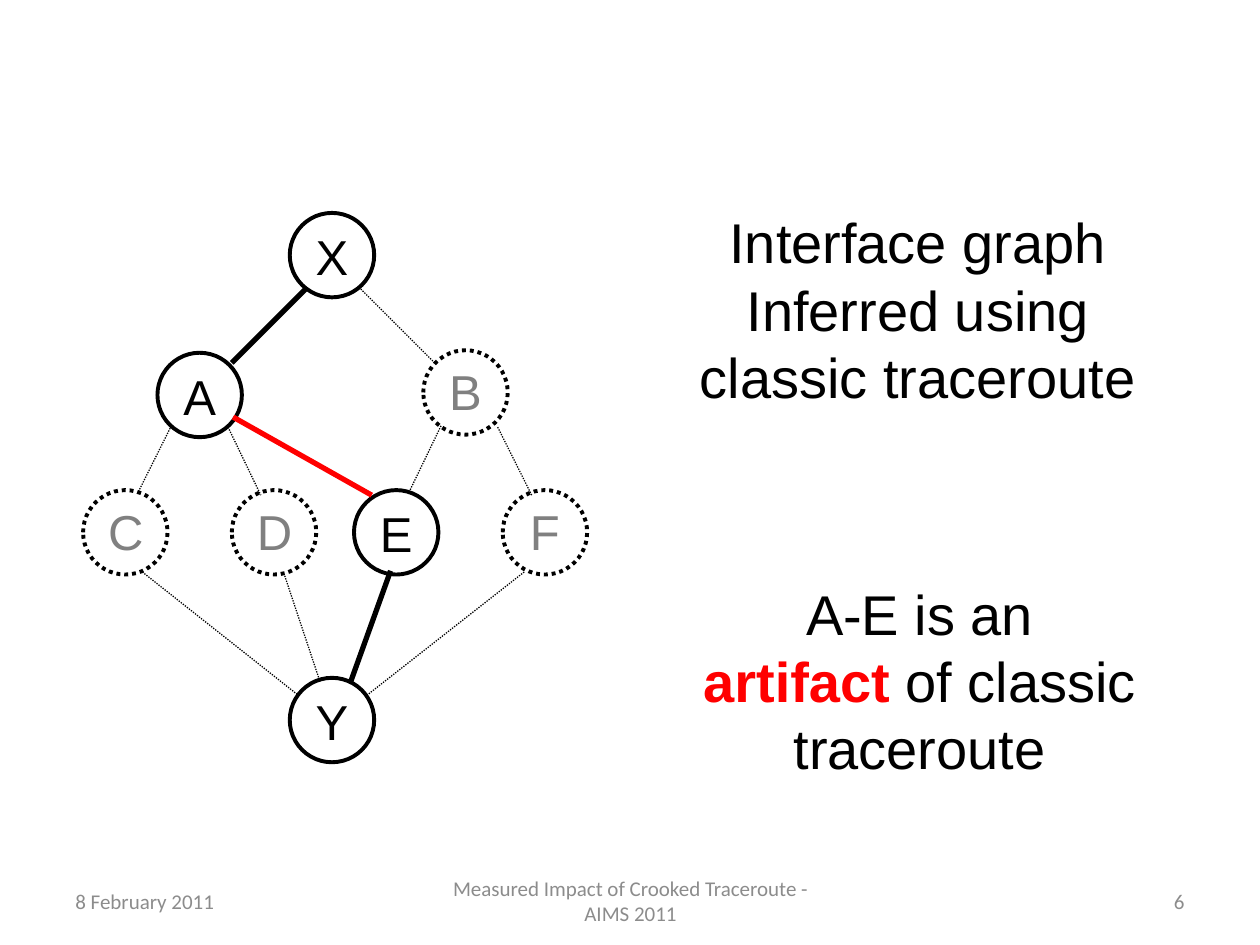
from dataclasses import dataclass

from pptx import Presentation
from pptx import util as u
from pptx.dml.color import RGBColor
from pptx.enum import dml, shapes, text
from pptx.oxml import xmlchemy


@dataclass(frozen=True)
class Theme:
    ink: RGBColor = RGBColor(0, 0, 0)
    accent: RGBColor = RGBColor(255, 0, 0)
    faded: RGBColor = RGBColor(128, 128, 128)
    footer: RGBColor = RGBColor(140, 140, 140)
    body_font: str = "Arial"
    footer_font: str = "Calibri"
    caption_size: int = 32
    node_size: int = 28
    footer_size: int = 12
    outline: float = 2.25
    strong_link: float = 3
    weak_link: float = 0.75


THEME = Theme()
DIAMETER = 0.67
LEFT, CENTER, RIGHT = text.PP_ALIGN.LEFT, text.PP_ALIGN.CENTER, text.PP_ALIGN.RIGHT

SEEN_NODES = {"X": (2.3, 1.69), "Y": (2.3, 5.38), "A": (1.25, 2.8), "E": (2.81, 3.89)}
MISSED_NODES = {"B": (3.36, 2.78), "C": (0.66, 3.89), "D": (1.84, 3.89), "F": (3.99, 3.89)}
SEEN_LINKS = [(2.43, 2.29, 1.84, 2.88), (3.1, 4.53, 2.78, 5.42)]
MISSED_LINKS = [
    (3.45, 2.88, 2.86, 2.29),
    (1.36, 3.38, 1.09, 3.92),
    (1.81, 3.39, 2.07, 3.93),
    (3.5, 3.38, 3.24, 3.92),
    (3.95, 3.39, 4.22, 3.93),
    (1.13, 4.54, 2.37, 5.52),
    (2.26, 4.57, 2.54, 5.41),
    (4.16, 4.54, 2.91, 5.52),
]
FALSE_LINK = (2.95, 3.93, 1.85, 3.31)


def style_line(line, color, width, dotted):
    line.color.rgb = color
    line.width = u.Pt(width)
    if dotted:
        line.dash_style = dml.MSO_LINE.ROUND_DOT


def style_font(font, name, size, color):
    font.name = name
    font.size = u.Pt(size)
    font.color.rgb = color


def add_box(slide, left, top, width, height, wrap=False):
    box = slide.shapes.add_textbox(*map(u.Inches, (left, top, width, height)))
    frame = box.text_frame
    frame.word_wrap = wrap
    if not wrap:
        frame.auto_size = text.MSO_AUTO_SIZE.SHAPE_TO_FIT_TEXT
    return frame


def add_node(slide, name, left, top, seen):
    circle = slide.shapes.add_shape(
        shapes.MSO_SHAPE.OVAL, *map(u.Inches, (left, top, DIAMETER, DIAMETER)))
    circle.shadow.inherit = False
    circle.fill.background()
    style_line(circle.line, THEME.ink, THEME.outline, not seen)

    label_top = top + (0.06 if seen else 0.04)
    frame = add_box(slide, left + 0.1, label_top, DIAMETER - 0.2, 0.57)
    para = frame.paragraphs[0]
    para.text = name
    para.alignment = CENTER
    style_font(para.font, THEME.body_font, THEME.node_size,
               THEME.ink if seen else THEME.faded)


def add_link(slide, ends, color, width, dotted=False):
    link = slide.shapes.add_connector(
        shapes.MSO_CONNECTOR.STRAIGHT, *map(u.Inches, ends))
    style_line(link.line, color, width, dotted)
    link._element.spPr.append(xmlchemy.OxmlElement("a:effectLst"))


def add_caption(slide, place, paragraphs):
    frame = add_box(slide, *place)
    for index, lines in enumerate(paragraphs):
        para = frame.add_paragraph() if index else frame.paragraphs[0]
        para.alignment = CENTER
        style_font(para.font, THEME.body_font, THEME.caption_size, THEME.ink)
        for number, spans in enumerate(lines):
            if number:
                para.add_line_break()
            for words, stressed in spans:
                span = para.add_run()
                span.text = words
                if stressed:
                    span.font.bold = True
                    span.font.color.rgb = THEME.accent


def add_footer(slide, left, width, words, alignment):
    frame = add_box(slide, left, 6.95, width, 0.4, wrap=True)
    frame.vertical_anchor = text.MSO_ANCHOR.MIDDLE
    para = frame.paragraphs[0]
    para.text = words
    para.alignment = alignment
    style_font(para.font, THEME.footer_font, THEME.footer_size, THEME.footer)


def main():
    deck = Presentation()
    deck.slide_width, deck.slide_height = u.Inches(10), u.Inches(7.5)
    page = deck.slides.add_slide(deck.slide_layouts.get_by_name("Blank"))

    for nodes, seen in ((SEEN_NODES, True), (MISSED_NODES, False)):
        for name, (left, top) in nodes.items():
            add_node(page, name, left, top, seen)
    for ends in SEEN_LINKS:
        add_link(page, ends, THEME.ink, THEME.strong_link)
    for ends in MISSED_LINKS:
        add_link(page, ends, THEME.ink, THEME.weak_link, dotted=True)
    add_link(page, FALSE_LINK, THEME.accent, THEME.strong_link)

    add_caption(page, (5.44, 1.6, 3.69, 1.72), [
        [[("Interface graph", False)]],
        [[("Inferred using", False)], [("classic traceroute", False)]],
    ])
    add_caption(page, (5.47, 4.55, 3.66, 1.72), [
        [[("A-E is an", False)],
         [("artifact", True), (" of classic", False)],
         [("traceroute", False)]],
    ])

    add_footer(page, 0.5, 2.33, "8 February 2011", LEFT)
    add_footer(page, 7.17, 2.33, "6", RIGHT)
    add_footer(page, 3.42, 3.17, "Measured Impact of Crooked Traceroute - AIMS 2011", CENTER)
    deck.save("out.pptx")


if __name__ == "__main__":
    main()
